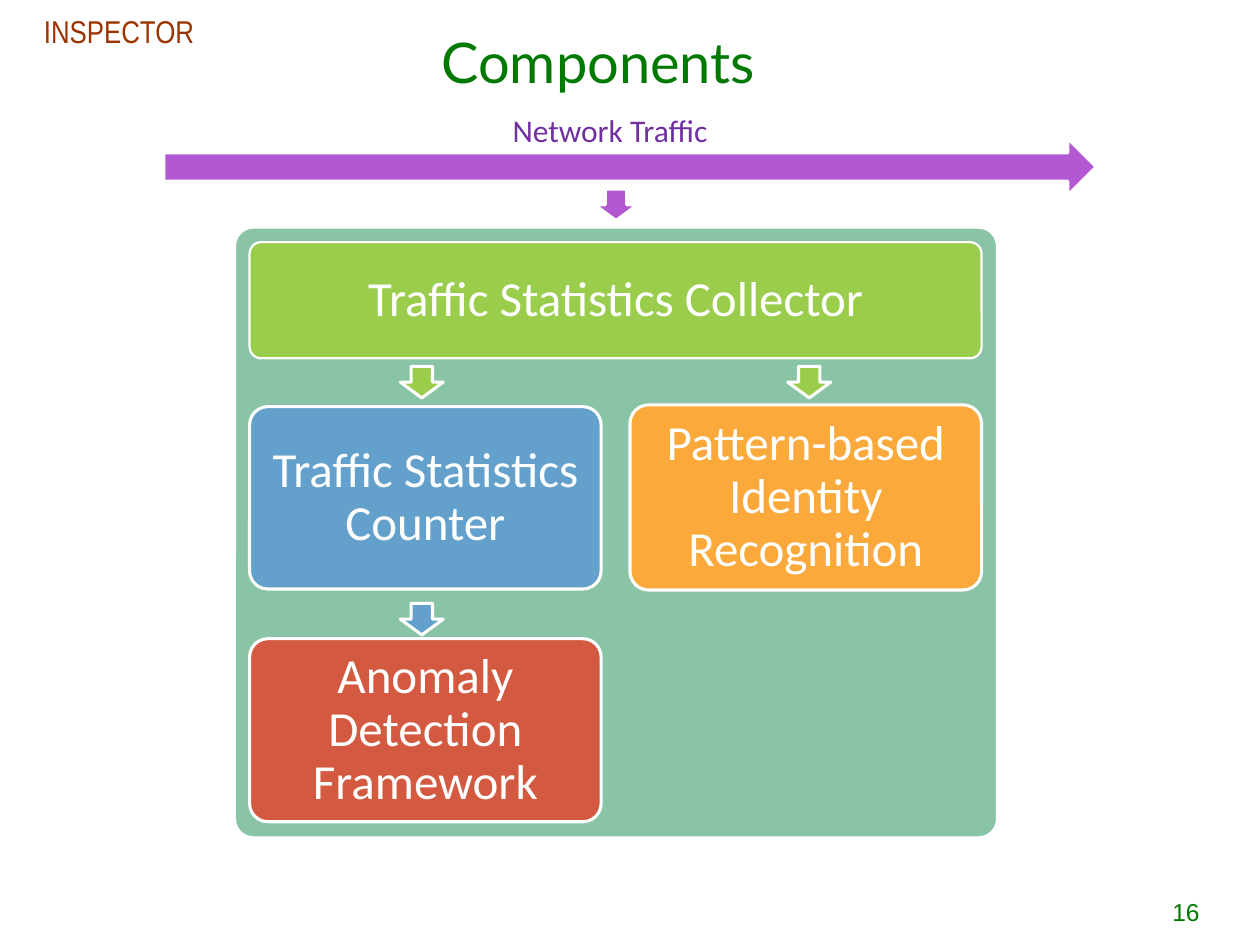
from dataclasses import dataclass

from pptx import Presentation
from pptx.dml.color import RGBColor
from pptx.enum.shapes import MSO_SHAPE
from pptx.enum.text import MSO_ANCHOR, PP_ALIGN
from pptx.util import Pt

COLORS = {
    "white": "FFFFFF", "green": "007900", "brown": "993300",
    "purple": "7030A0", "traffic": "B258D3", "panel": "8AC4A7",
    "collector": "9ACD4C", "counter": "63A0CC",
    "anomaly": "D35940", "pattern": "FAA93A",
}
LEFT_COLUMN, RIGHT_COLUMN = 142.6, 360
COLUMN_WIDTH = 200.9
FULL_WIDTH = RIGHT_COLUMN + COLUMN_WIDTH - LEFT_COLUMN
ARROW_WIDTH, ARROW_HEIGHT = 24.5, 18


@dataclass
class Label:
    text: str
    left: float
    top: float
    width: float
    height: float
    size: float
    font: str
    color: str
    align: PP_ALIGN = PP_ALIGN.LEFT
    anchor: MSO_ANCHOR = MSO_ANCHOR.TOP
    wrap: bool = True


@dataclass
class Block:
    kind: MSO_SHAPE
    left: float
    top: float
    width: float
    height: float
    color: str
    corner: float | None = None
    text: str = ""
    outline: float = 1.75


def component(text: str, left: float, top: float, width: float,
              height: float, color: str, outline: float = 1.75) -> Block:
    return Block(MSO_SHAPE.ROUNDED_RECTANGLE, left, top, width, height,
                 color, 0.1, text, outline)


def down_arrow(left: float, top: float, color: str) -> Block:
    return Block(MSO_SHAPE.DOWN_ARROW, left, top, ARROW_WIDTH, ARROW_HEIGHT, color)


LABELS = [
    Label("16", 649.4, 509, 43.2, 24.5, 14, "Arial", "green", PP_ALIGN.RIGHT),
    Label("Components", 18, 8, 648, 54, 32, "Lato", "green",
          PP_ALIGN.CENTER, MSO_ANCHOR.MIDDLE),
    Label("Network Traffic", 285.8, 59.8, 128.2, 28.8, 18, "Calibri", "purple"),
    Label("INSPECTOR", 18, 3.6, 101.5, 28.8, 18, "Arial Narrow", "brown", wrap=False),
]
BLOCKS = [
    Block(MSO_SHAPE.RIGHT_ARROW, 93.6, 79.2, 532.8, 32.4, "traffic"),
    Block(MSO_SHAPE.ROUNDED_RECTANGLE, 134, 129.8, 436, 349, "panel", 0.031),
    component("Traffic Statistics Collector", LEFT_COLUMN, 138.4,
              FULL_WIDTH, 66.4, "collector", 1.25),
    component("Traffic Statistics Counter", LEFT_COLUMN, 232.4,
              COLUMN_WIDTH, 104.2, "counter"),
    component("Anomaly Detection Framework", LEFT_COLUMN, 365,
              COLUMN_WIDTH, 104.6, "anomaly"),
    component("Pattern-based Identity Recognition", RIGHT_COLUMN, 231.4,
              COLUMN_WIDTH, 105.8, "pattern"),
    down_arrow(228.8, 209.4, "collector"),
    down_arrow(450.2, 209.4, "collector"),
    down_arrow(228.8, 344.8, "counter"),
    down_arrow(339.8, 108, "traffic"),
]


def rgb(name: str) -> RGBColor:
    return RGBColor.from_string(COLORS[name])


def write(frame, text: str, size: float, font: str, color: str, align: PP_ALIGN):
    paragraph = frame.paragraphs[0]
    paragraph.alignment = align
    run = paragraph.add_run()
    run.text = text
    for attribute, value in {"size": Pt(size), "name": font}.items():
        setattr(run.font, attribute, value)
    run.font.color.rgb = rgb(color)
    return paragraph


def draw_label(slide, label: Label) -> None:
    box = slide.shapes.add_textbox(
        Pt(label.left), Pt(label.top), Pt(label.width), Pt(label.height))
    frame = box.text_frame
    frame.word_wrap = label.wrap
    frame.vertical_anchor = label.anchor
    write(frame, label.text, label.size, label.font, label.color, label.align)


def draw_block(slide, block: Block) -> None:
    shape = slide.shapes.add_shape(
        block.kind, Pt(block.left), Pt(block.top), Pt(block.width), Pt(block.height))
    shape.shadow.inherit = False
    shape.fill.solid()
    shape.fill.fore_color.rgb = rgb(block.color)
    shape.line.color.rgb = rgb("white")
    shape.line.width = Pt(block.outline)
    if block.corner is not None:
        shape.adjustments[0] = block.corner
    if block.text:
        frame = shape.text_frame
        frame.word_wrap = True
        frame.vertical_anchor = MSO_ANCHOR.MIDDLE
        for side in ("left", "top", "right", "bottom"):
            setattr(frame, f"margin_{side}", Pt(8.4))
        paragraph = write(frame, block.text, 28, "Calibri", "white", PP_ALIGN.CENTER)
        paragraph.line_spacing = 0.9


def main() -> None:
    presentation = Presentation()
    presentation.slide_width, presentation.slide_height = Pt(720), Pt(540)
    slide = presentation.slides.add_slide(presentation.slide_layouts[6])
    for block in BLOCKS:
        draw_block(slide, block)
    for label in LABELS:
        draw_label(slide, label)
    presentation.save("out.pptx")


if __name__ == "__main__":
    main()
